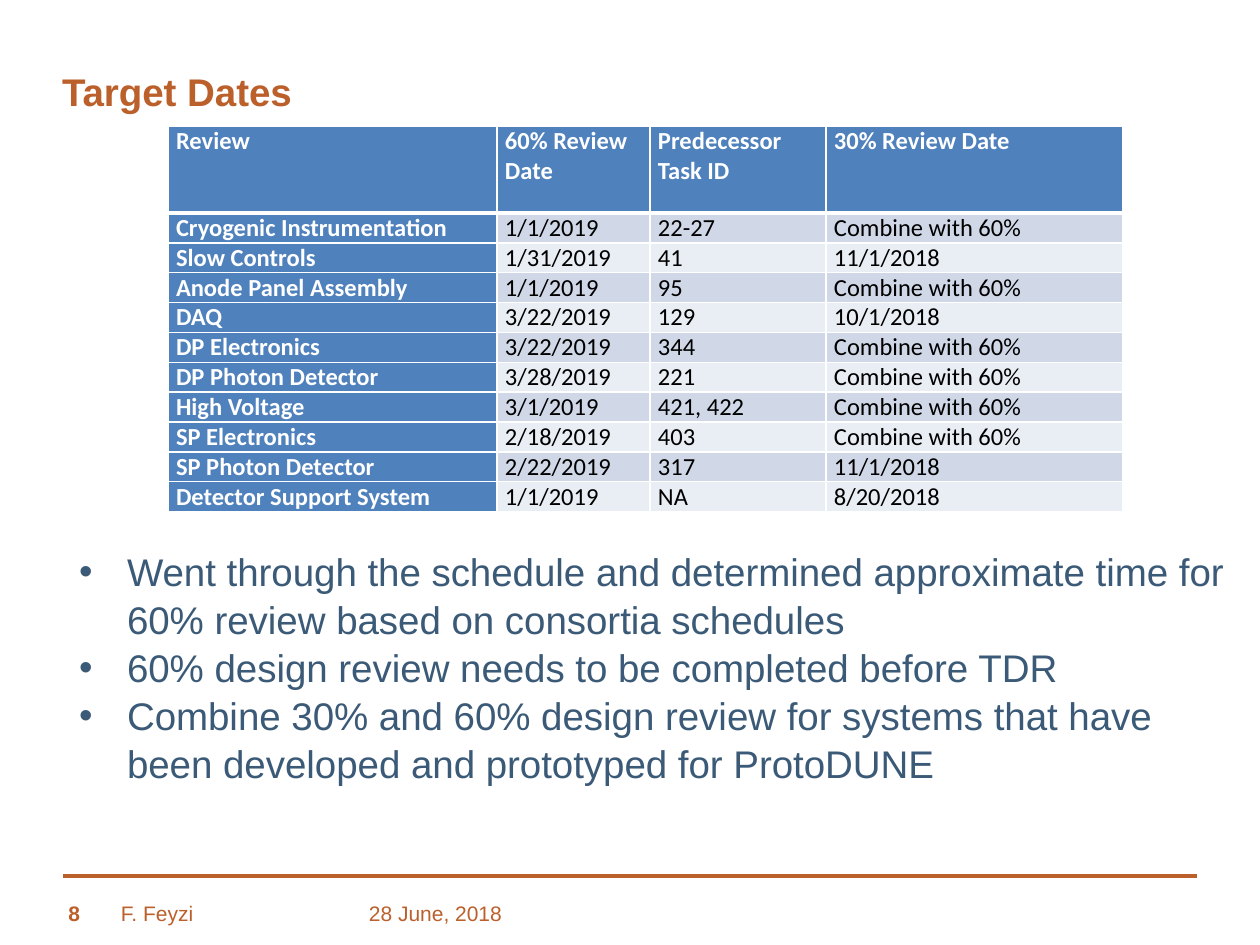
from lxml import etree
from pptx import Presentation
from pptx.dml.color import RGBColor
from pptx.enum.shapes import MSO_CONNECTOR
from pptx.enum.text import MSO_ANCHOR, MSO_AUTO_SIZE, PP_ALIGN
from pptx.oxml.ns import qn
from pptx.util import Pt

STRAIGHT = MSO_CONNECTOR.STRAIGHT
TOP = MSO_ANCHOR.TOP
NO_AUTOFIT = MSO_AUTO_SIZE.NONE
LEFT, RIGHT = PP_ALIGN.LEFT, PP_ALIGN.RIGHT

ORANGE = RGBColor(0xBB, 0x5F, 0x2B)
SLATE = RGBColor(0x3B, 0x5A, 0x77)
BLUE = RGBColor(0x4F, 0x81, 0xBD)
BANDS = RGBColor(0xD0, 0xD8, 0xE8), RGBColor(0xE9, 0xED, 0xF4)
WHITE = RGBColor(0xFF, 0xFF, 0xFF)
BLACK = RGBColor(0x00, 0x00, 0x00)

EMU_PER_PX = 914400 // 126
COMBINED = "Combine with 60%"
REVIEWS = [
    ("Review", "60% Review Date", "Predecessor Task ID", "30% Review Date"),
    ("Cryogenic Instrumentation", "1/1/2019", "22-27", COMBINED),
    ("Slow Controls", "1/31/2019", "41", "11/1/2018"),
    ("Anode Panel Assembly", "1/1/2019", "95", COMBINED),
    ("DAQ", "3/22/2019", "129", "10/1/2018"),
    ("DP Electronics", "3/22/2019", "344", COMBINED),
    ("DP Photon Detector", "3/28/2019", "221", COMBINED),
    ("High Voltage", "3/1/2019", "421, 422", COMBINED),
    ("SP Electronics", "2/18/2019", "403", COMBINED),
    ("SP Photon Detector", "2/22/2019", "317", "11/1/2018"),
    ("Detector Support System", "1/1/2019", "NA", "8/20/2018"),
]
COLUMN_WIDTHS = 329, 153, 176, 297
HEADER_HEIGHT, ROW_HEIGHT = 87, 29
POINTS = [
    "Went through the schedule and determined approximate time for 60% review "
    "based on consortia schedules",
    "60% design review needs to be completed before TDR",
    "Combine 30% and 60% design review for systems that have been developed and "
    "prototyped for ProtoDUNE",
]


def px(length):
    """Convert pixels to EMU."""
    return length * EMU_PER_PX


def place(shape, box):
    """Move a shape to a box of left, top, width and height."""
    shape.left, shape.top, shape.width, shape.height = map(px, box)


def style(paragraph, size, color, bold=False, name="Arial"):
    """Format the runs of a paragraph."""
    for run in paragraph.runs:
        font = run.font
        font.name, font.size, font.bold = name, Pt(size), bold
        font.color.rgb = color


def prepare_frame(text_frame):
    """Make a wrapping, top-anchored frame without insets."""
    text_frame.auto_size = NO_AUTOFIT
    text_frame.word_wrap = True
    text_frame.vertical_anchor = TOP
    text_frame.margin_left = text_frame.margin_right = 0
    text_frame.margin_top = text_frame.margin_bottom = 0


def add_title(slide, box):
    """Fill the title placeholder."""
    title = slide.shapes.title
    place(title, box)
    prepare_frame(title.text_frame)
    title.text_frame.text = "Target Dates"
    paragraph = title.text_frame.paragraphs[0]
    paragraph.alignment = LEFT
    style(paragraph, 22, ORANGE, bold=True)


def add_points(slide, box):
    """Fill the body placeholder with bulleted points."""
    body = slide.placeholders[1]
    place(body, box)
    prepare_frame(body.text_frame)
    body.text_frame.text = "\n".join(POINTS)
    for paragraph in body.text_frame.paragraphs:
        paragraph.space_before = Pt(0)
        paragraph.line_spacing = 1.04
        properties = paragraph._p.get_or_add_pPr()
        properties.set("marL", str(px(48)))
        properties.set("indent", str(-px(48)))
        etree.SubElement(properties, qn("a:buChar")).set("char", "•")
        style(paragraph, 22, SLATE)


def add_borders(cell, top, bottom):
    """Draw white cell borders, with top and bottom widths in points."""
    properties = cell._tc.get_or_add_tcPr()
    sides = ("L", 1), ("R", 1), ("T", top), ("B", bottom)
    for index, (side, width) in enumerate(sides):
        line = etree.Element(qn(f"a:ln{side}"), w=str(Pt(width)))
        fill = etree.SubElement(line, qn("a:solidFill"))
        etree.SubElement(fill, qn("a:srgbClr")).set("val", str(WHITE))
        properties.insert(index, line)


def add_review_table(slide, box):
    """Add the table of review dates."""
    table = slide.shapes.add_table(
        len(REVIEWS), len(COLUMN_WIDTHS), *map(px, box)
    ).table
    for column, width in zip(table.columns, COLUMN_WIDTHS):
        column.width = px(width)
    for row_index, (row, texts) in enumerate(zip(table.rows, REVIEWS)):
        row.height = px(ROW_HEIGHT if row_index else HEADER_HEIGHT)
        for column_index, (cell, text) in enumerate(zip(row.cells, texts)):
            heading = row_index == 0 or column_index == 0
            cell.margin_left = cell.margin_right = px(8)
            cell.margin_top = cell.margin_bottom = 0
            cell.fill.solid()
            cell.fill.fore_color.rgb = BLUE if heading else BANDS[(row_index - 1) % 2]
            add_borders(cell, 3 if row_index == 1 else 1, 3 if row_index == 0 else 1)
            cell.text_frame.text = text
            style(cell.text_frame.paragraphs[0], 14,
                  WHITE if heading else BLACK, heading, "Calibri")


def add_footer(slide, box):
    """Add the rule, page number, author and date."""
    left, top, width, height = box
    rule = slide.shapes.add_connector(
        STRAIGHT, px(left), px(top), px(left + width), px(top)
    )
    rule.line.color.rgb = ORANGE
    rule.line.width = Pt(2.04)
    etree.SubElement(rule._element.spPr, qn("a:effectLst"))
    entries = [
        ("8", -30, 47, RIGHT, True),
        ("F. Feyzi", 58, 207, LEFT, False),
        ("28 June, 2018", 306, 199, LEFT, False),
    ]
    for text, offset, entry_width, alignment, bold in entries:
        entry_box = left + offset, top + height - 25, entry_width, 25
        text_frame = slide.shapes.add_textbox(*map(px, entry_box)).text_frame
        prepare_frame(text_frame)
        text_frame.text = text
        paragraph = text_frame.paragraphs[0]
        paragraph.alignment = alignment
        style(paragraph, 12, ORANGE, bold)


def main():
    """Build and save the slide."""
    presentation = Presentation()
    presentation.slide_width, presentation.slide_height = px(1260), px(945)
    slide = presentation.slides.add_slide(presentation.slide_layouts[1])
    add_title(slide, (62, 68, 1138, 47))
    add_points(slide, (79, 546, 1154, 280))
    add_footer(slide, (63, 876, 1134, 50))
    add_review_table(slide, (168, 126, sum(COLUMN_WIDTHS), 381))
    presentation.save("out.pptx")


if __name__ == "__main__":
    main()
